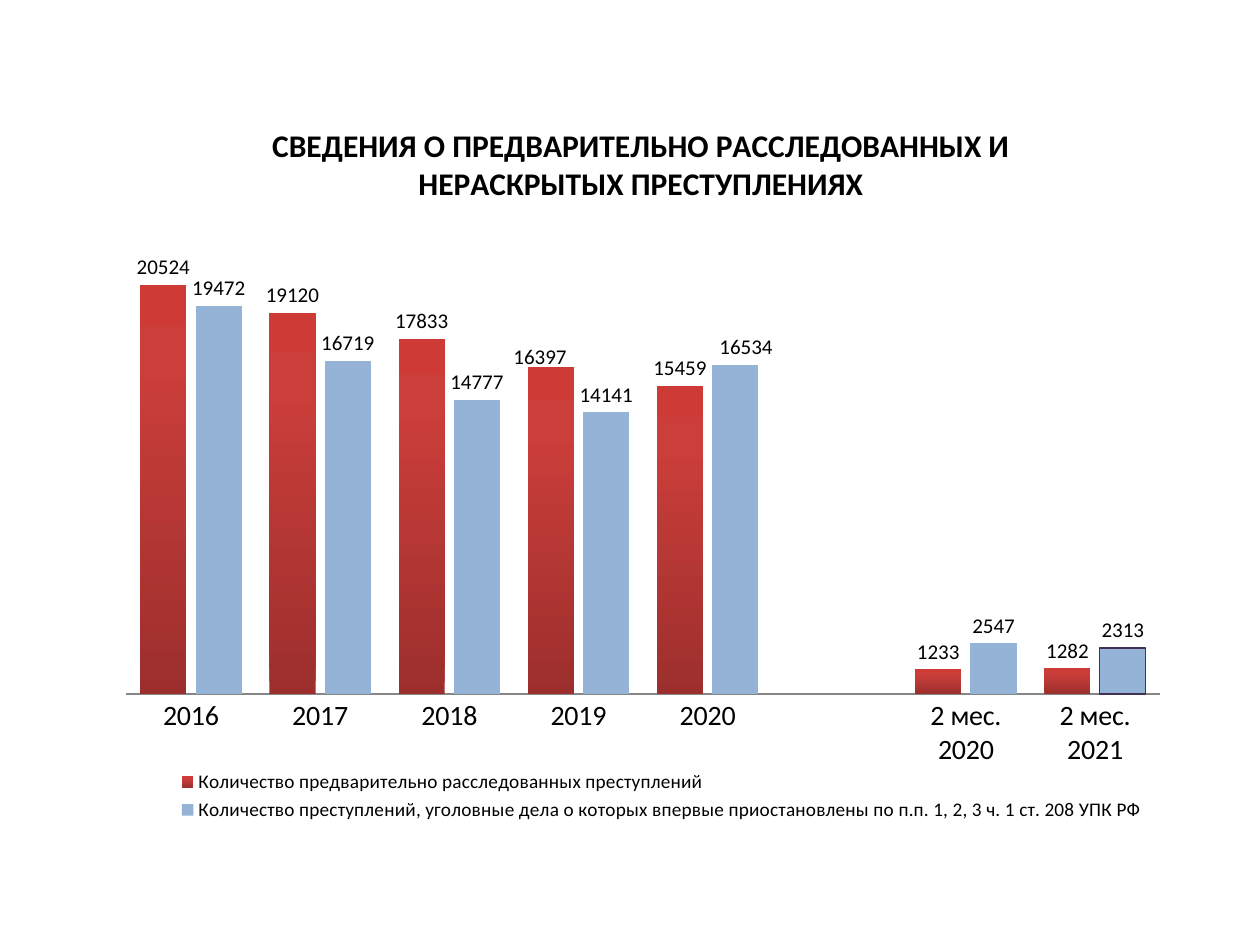
import lxml.etree
import pptx
import pptx.chart.data
import pptx.dml.color
import pptx.enum.chart
import pptx.oxml
import pptx.oxml.ns
import pptx.util

Pt = pptx.util.Pt
qn = pptx.oxml.ns.qn

TITLE = "СВЕДЕНИЯ О ПРЕДВАРИТЕЛЬНО РАССЛЕДОВАННЫХ И НЕРАСКРЫТЫХ ПРЕСТУПЛЕНИЯХ"
PERIODS = ["2016", "2017", "2018", "2019", "2020", "", "2 мес. 2020", "2 мес. 2021"]
SOLVED = "Количество предварительно расследованных преступлений"
SUSPENDED = ("Количество преступлений, уголовные дела о которых впервые "
             "приостановлены по п.п. 1, 2, 3 ч. 1 ст. 208 УПК РФ")
COUNTS = {
    SOLVED: [20524, 19120, 17833, 16397, 15459, None, 1233, 1282],
    SUSPENDED: [19472, 16719, 14777, 14141, 16534, None, 2547, 2313],
}
RED_STOPS = [(0, "9C2F2D"), (80, "CB3E3A"), (100, "CE3B37")]


def color(value):
    return pptx.dml.color.RGBColor.from_string(value)


def format_font(font, name="Calibri", size=18, bold=False, fill="000000"):
    font.name = name
    font.size = Pt(size)
    font.bold = bold
    font.color.rgb = color(fill)


def write_text(frame, text, **style):
    span = frame.paragraphs[0].add_run()
    span.text = text
    format_font(span.font, **style)


def manual_layout(**parts):
    """Return a c:layout element; sizes and positions are shares of the chart."""
    layout = lxml.etree.Element(qn("c:layout"))
    manual = lxml.etree.SubElement(layout, qn("c:manualLayout"))
    for tag, value in parts.items():
        lxml.etree.SubElement(manual, qn("c:" + tag)).set("val", str(value))
    return layout


def place(parent, before, **parts):
    """Give a chart part a manual layout, right after the named child."""
    for old in parent.findall(qn("c:layout")):
        parent.remove(old)
    layout = manual_layout(**parts)
    anchor = parent.find(qn(before)) if before else None
    if anchor is None:
        parent.insert(0, layout)
    else:
        anchor.addnext(layout)


def fill_gradient(fill, stops, angle):
    fill.gradient()
    stop_list = fill._fill._gradFill.find(qn("a:gsLst"))
    for old in list(stop_list):
        stop_list.remove(old)
    for percent, value in stops:
        stop = lxml.etree.SubElement(stop_list, qn("a:gs"), pos=str(percent * 1000))
        lxml.etree.SubElement(stop, qn("a:srgbClr"), val=value)
    fill.gradient_angle = 360 - angle


class Deck:
    def __init__(self, width, height):
        self.deck = pptx.Presentation()
        self.deck.slide_width = Pt(width)
        self.deck.slide_height = Pt(height)
        self.page = None

    def add_page(self):
        self.page = self.deck.slides.add_slide(self.deck.slide_layouts[6])

    def add_column_chart(self, left, top, width, height, categories, series):
        data = pptx.chart.data.CategoryChartData()
        data.categories = categories
        for name, values in series.items():
            data.add_series(name, values)
        frame = self.page.shapes.add_chart(
            pptx.enum.chart.XL_CHART_TYPE.COLUMN_CLUSTERED,
            Pt(left), Pt(top), Pt(width), Pt(height), data)
        chart = frame.chart
        format_font(chart.font)
        plot = chart.plots[0]
        plot.gap_width = 60
        plot.overlap = -20
        plot.vary_by_categories = False
        place(chart._chartSpace.chart.plotArea, None, layoutTarget="inner",
              xMode="edge", yMode="edge", x=0.02, y=0.134, w=0.964, h=0.669)
        return chart

    def add_chart_title(self, chart, text):
        chart.has_title = True
        write_text(chart.chart_title.text_frame, text, bold=True)
        chart.chart_title.include_in_layout = False

    def format_axes(self, chart):
        ticks = pptx.enum.chart.XL_TICK_MARK
        axis = chart.category_axis
        axis.major_tick_mark = axis.minor_tick_mark = ticks.NONE
        axis.format.line.color.rgb = color("868686")
        format_font(axis.tick_labels.font, size=16)
        values = chart.value_axis
        values.minimum_scale, values.maximum_scale = 0, 25000
        values.has_major_gridlines = False
        values.visible = False

    def add_legend(self, chart):
        chart.has_legend = True
        legend = chart.legend
        legend.position = pptx.enum.chart.XL_LEGEND_POSITION.BOTTOM
        legend.include_in_layout = False
        format_font(legend.font, size=11)
        place(legend._element, "c:legendPos", xMode="edge", yMode="edge",
              x=0.065, y=0.9, w=0.91, h=0.08)

    def add_labels(self, series):
        labels = series.data_labels
        labels.show_value = True
        labels.position = pptx.enum.chart.XL_LABEL_POSITION.OUTSIDE_END
        format_font(labels.font, size=12)

    def shift_label(self, series, index, x, y):
        label = series.points[index].data_label
        label.position = pptx.enum.chart.XL_LABEL_POSITION.OUTSIDE_END
        format_font(label.font, size=12)
        place(label._dLbl, "c:idx", x=x, y=y)


def main():
    deck = Deck(720, 540)
    deck.add_page()

    # Chart with its title, axes and legend
    chart = deck.add_column_chart(60, 55, 612.5, 425.5, PERIODS, COUNTS)
    deck.add_chart_title(chart, TITLE)
    deck.format_axes(chart)
    deck.add_legend(chart)

    # Series colours and value labels
    solved, suspended = chart.plots[0].series
    fill_gradient(solved.format.fill, RED_STOPS, 270)
    suspended.format.fill.solid()
    suspended.format.fill.fore_color.rgb = color("95B3D7")
    for series in (solved, suspended):
        series.invert_if_negative = False
        deck.add_labels(series)
    deck.shift_label(solved, 3, -0.01, 0.01)
    deck.shift_label(suspended, 4, 0.01, 0)

    # Outlined last column
    latest = suspended.points[7].format
    latest.fill.solid()
    latest.fill.fore_color.rgb = color("95B3D7")
    latest.line.color.rgb = color("403152")
    latest.line.width = Pt(0.75)

    deck.deck.save("out.pptx")


if __name__ == "__main__":
    main()
